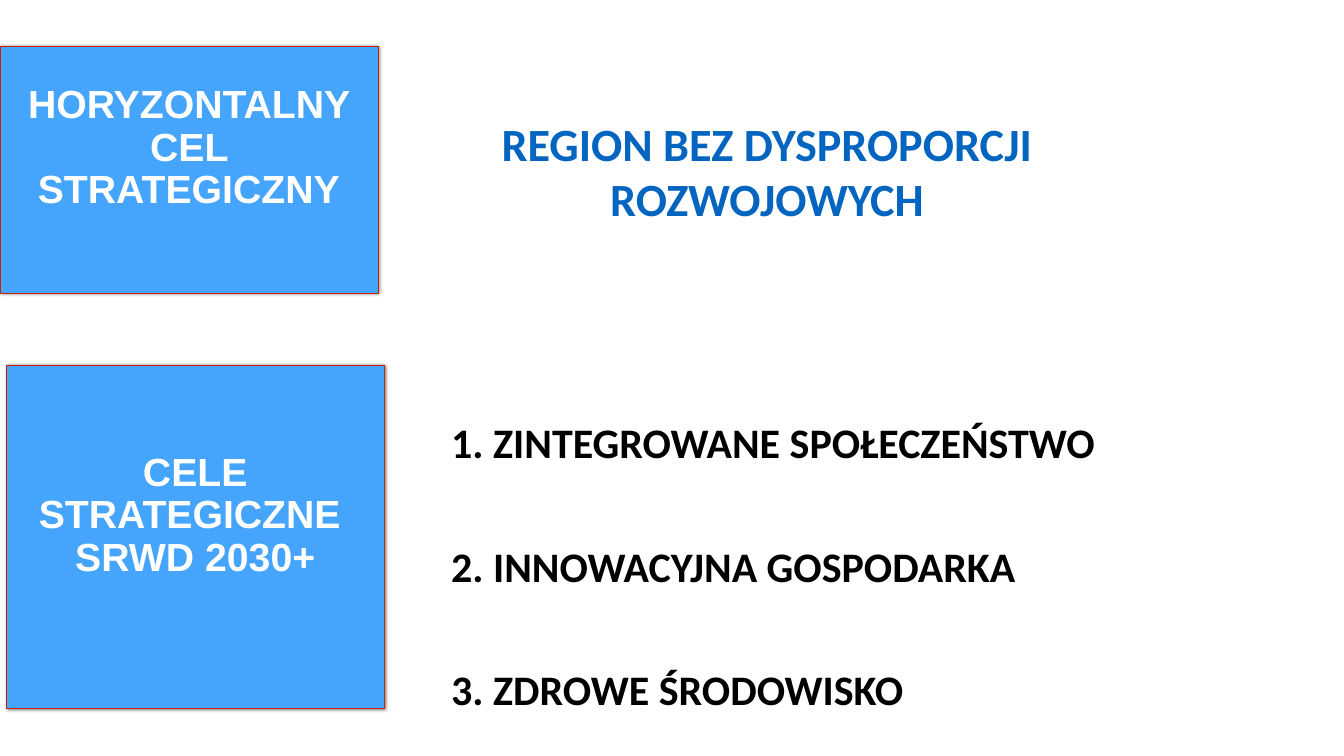
"""Build the slide with the horizontal and strategic goals of the region."""
from dataclasses import dataclass

from lxml import etree
from pptx import Presentation
from pptx import util as u
from pptx.dml import color
from pptx.enum import shapes, text
from pptx.oxml import ns

PX = 19050


@dataclass(frozen=True)
class Theme:
    card: str = "45A4FC"
    border: str = "C82101"
    shadow: str = "000000"
    label: str = "FFFFFF"
    heading: str = "0365C0"
    goals: str = "000000"
    label_font: str = "Arial"
    body_font: str = "Calibri"
    label_size: int = 56
    heading_size: int = 66
    goals_size: int = 60


THEME = Theme()


@dataclass(frozen=True)
class Box:
    left: int
    top: int
    width: int
    height: int

    def emu(self) -> list[int]:
        return [n * PX for n in (self.left, self.top, self.width, self.height)]


@dataclass(frozen=True)
class Card:
    box: Box
    label: str
    border: float
    inset: int


@dataclass(frozen=True)
class TextBlock:
    box: Box
    lines: tuple[str, ...]
    font: str
    size: int
    colour: str
    frame: dict
    paragraph: dict


CARD_LINE = 40
CARDS = (
    Card(Box(6, 348, 360, 327), "CELE STRATEGICZNE \vSRWD 2030+", 1, 5),
    Card(Box(0, 44, 360, 235), "HORYZONTALNY CEL STRATEGICZNY", 0.75, 2),
)
TEXTS = (
    TextBlock(
        Box(425, 344, 713, 317),
        ("1. ZINTEGROWANE SPOŁECZEŃSTWO", "2. INNOWACYJNA GOSPODARKA", "3. ZDROWE ŚRODOWISKO"),
        THEME.body_font, THEME.goals_size, THEME.goals,
        {"margin_top": 5 * PX, "margin_bottom": 5 * PX},
        {"alignment": text.PP_ALIGN.JUSTIFY, "line_spacing": 2.0,
         "space_before": u.Pt(20), "space_after": u.Pt(12)},
    ),
    TextBlock(
        Box(360, 107, 741, 111),
        ("REGION BEZ DYSPROPORCJI ROZWOJOWYCH",),
        THEME.body_font, THEME.heading_size, THEME.heading,
        {"auto_size": text.MSO_AUTO_SIZE.SHAPE_TO_FIT_TEXT},
        {"alignment": text.PP_ALIGN.CENTER},
    ),
)


def apply(target, values: dict) -> None:
    for name, value in values.items():
        setattr(target, name, value)


def write(shape, block: TextBlock) -> None:
    frame = shape.text_frame
    apply(frame, {"word_wrap": True, **block.frame})
    for index, line in enumerate(block.lines):
        paragraph = frame.add_paragraph() if index else frame.paragraphs[0]
        paragraph.text = line
        apply(paragraph, block.paragraph)
        if index == 0:
            paragraph.space_before = u.Pt(0)
        for run in paragraph.runs:
            apply(run.font, {"name": block.font, "size": u.Pt(block.size), "bold": True})
            run.font.color.rgb = color.RGBColor.from_string(block.colour)


def add_shadow(shape) -> None:
    shape.shadow.inherit = False
    effects = shape.element.spPr.find(ns.qn("a:effectLst"))
    outer = etree.SubElement(effects, ns.qn("a:outerShdw"), blurRad=str(u.Pt(5)),
                             dist=str(u.Pt(1)), dir="0", rotWithShape="0")
    tint = etree.SubElement(outer, ns.qn("a:srgbClr"), val=THEME.shadow)
    etree.SubElement(tint, ns.qn("a:alpha"), val="50000")


def draw_card(slide, card: Card) -> None:
    shape = slide.shapes.add_shape(shapes.MSO_SHAPE.RECTANGLE, *card.box.emu())
    shape.fill.solid()
    shape.fill.fore_color.rgb = color.RGBColor.from_string(THEME.card)
    shape.line.color.rgb = color.RGBColor.from_string(THEME.border)
    shape.line.width = u.Pt(card.border)
    add_shadow(shape)
    write(shape, TextBlock(
        card.box, (card.label,), THEME.label_font, THEME.label_size, THEME.label,
        {"vertical_anchor": text.MSO_ANCHOR.MIDDLE,
         "margin_left": 5 * PX, "margin_right": 5 * PX,
         "margin_top": card.inset * PX, "margin_bottom": (card.inset + CARD_LINE) * PX},
        {"alignment": text.PP_ALIGN.CENTER, "line_spacing": 0.9},
    ))


def draw_text(slide, block: TextBlock) -> None:
    write(slide.shapes.add_textbox(*block.box.emu()), block)


def main() -> None:
    deck = Presentation()
    apply(deck, {"slide_width": 1280 * PX, "slide_height": 720 * PX})
    slide = deck.slides.add_slide(deck.slide_layouts[6])
    for card in CARDS:
        draw_card(slide, card)
    for block in TEXTS:
        draw_text(slide, block)
    deck.save("out.pptx")


if __name__ == "__main__":
    main()
